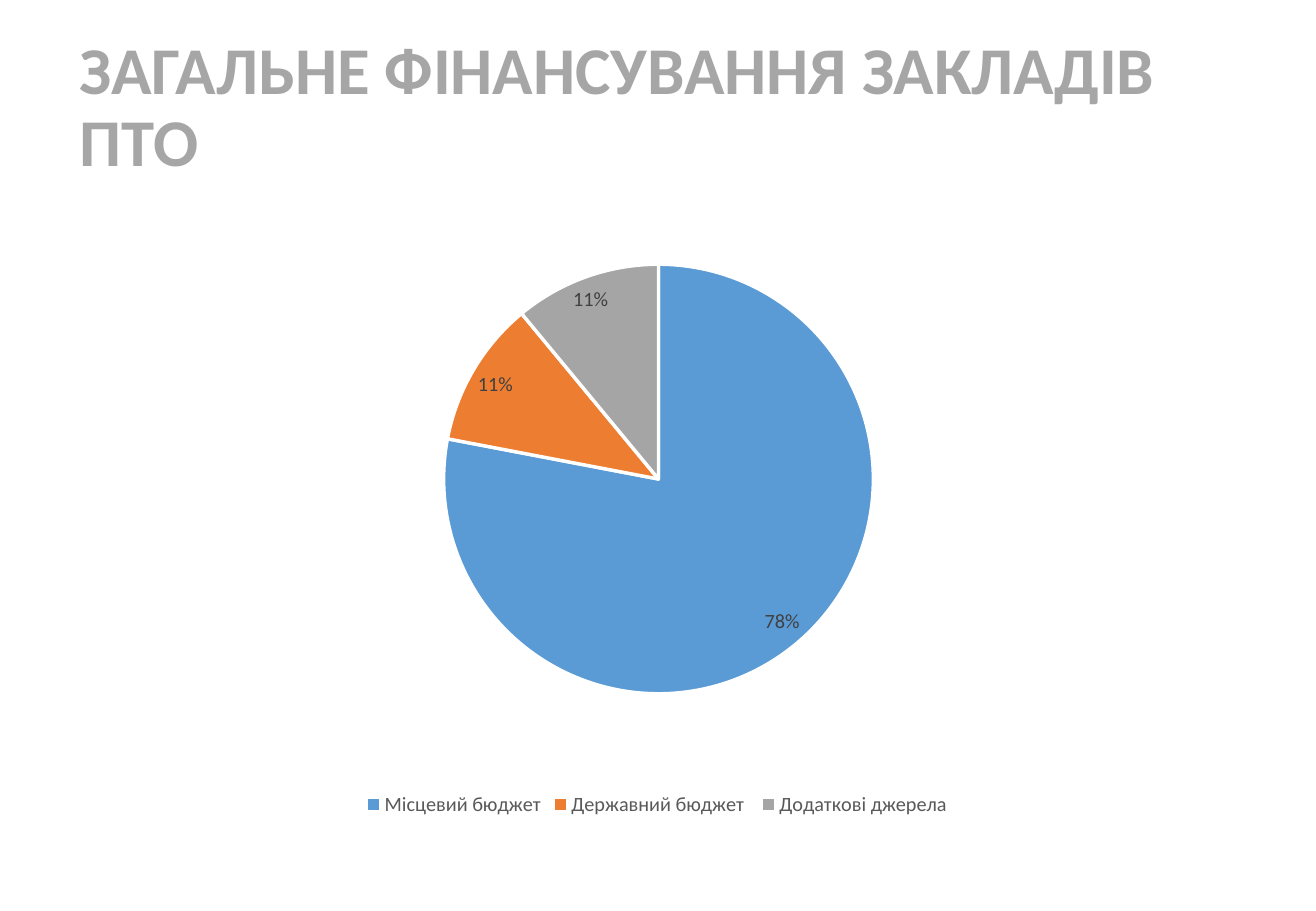
from lxml import etree
from pptx import Presentation
from pptx.chart.data import CategoryChartData
from pptx.dml.color import RGBColor
from pptx.enum.chart import XL_CHART_TYPE as ChartType
from pptx.enum.chart import XL_LABEL_POSITION as LabelPosition
from pptx.enum.chart import XL_LEGEND_POSITION as LegendPosition
from pptx.enum.text import MSO_ANCHOR as Anchor
from pptx.oxml import parse_xml
from pptx.oxml.ns import nsdecls, qn
from pptx.util import Inches, Pt

FONT = "Calibri"
FUNDING = [
    ("Місцевий бюджет", 78, "5B9BD5"),
    ("Державний бюджет ", 11, "ED7D31"),
    ("Додаткові джерела", 11, "A5A5A5"),
]
PIE_AREA = {"x": 0.08, "y": 0.037, "w": 0.842, "h": 0.743}


def color(hex_value):
    """Return the colour for a hex string."""
    return RGBColor.from_string(hex_value)


def style_font(font, size, hex_value, bold=False):
    """Set typeface, size, colour and weight."""
    font.name = FONT
    font.size = Pt(size)
    font.color.rgb = color(hex_value)
    font.bold = bold


def add_heading(slide, text, left, top, width, height):
    """Add the slide heading."""
    heading = slide.shapes.add_textbox(
        Inches(left), Inches(top), Inches(width), Inches(height))
    frame = heading.text_frame
    frame.word_wrap = True
    frame.vertical_anchor = Anchor.TOP
    frame.text = text
    line = frame.paragraphs[0]
    line.line_spacing = 0.9
    style_font(line.runs[0].font, 39.6, "A6A6A6", bold=True)


def set_pie_area(chart, area):
    """Fix the inner plot area as fractions of the chart."""
    plot_area = chart.plots[0]._element.getparent()
    for old_layout in plot_area.findall(qn("c:layout")):
        plot_area.remove(old_layout)
    layout = parse_xml(f"<c:layout {nsdecls('c')}><c:manualLayout/></c:layout>")
    settings = {"layoutTarget": "inner", "xMode": "edge", "yMode": "edge", **area}
    for tag, value in settings.items():
        etree.SubElement(layout[0], qn(f"c:{tag}")).set("val", str(value))
    plot_area.insert(0, layout)


def add_funding_pie(slide, left, top, width, height):
    """Add the pie of funding shares with its legend."""
    shares = CategoryChartData()
    shares.categories = [source for source, _, _ in FUNDING]
    shares.add_series("Series 1", [share for _, share, _ in FUNDING])
    chart = slide.shapes.add_chart(
        ChartType.PIE, Inches(left), Inches(top), Inches(width), Inches(height),
        shares).chart
    style_font(chart.font, 10, "000000")
    chart.has_title = False
    chart.has_legend = True
    chart.legend.position = LegendPosition.BOTTOM
    chart.legend.include_in_layout = False
    style_font(chart.legend.font, 12, "595959")
    set_pie_area(chart, PIE_AREA)

    pie = chart.plots[0]
    pie.vary_by_categories = True
    for index, (_, _, hex_value) in enumerate(FUNDING):
        piece = pie.series[0].points[index].format
        piece.fill.solid()
        piece.fill.fore_color.rgb = color(hex_value)
        piece.line.color.rgb = color("FFFFFF")
        piece.line.width = Pt(2)

    labels = pie.series[0].data_labels
    labels.show_value = False
    labels.show_percentage = True
    labels.number_format = "0%"
    labels.number_format_is_linked = False
    labels.position = LabelPosition.BEST_FIT
    style_font(labels.font, 12, "404040")


def main():
    """Build and save the slide."""
    deck = Presentation()
    deck.slide_width, deck.slide_height = Inches(10.83), Inches(7.5)
    slide = deck.slides.add_slide(deck.slide_layouts[6])
    add_heading(slide, "ЗАГАЛЬНЕ ФІНАНСУВАННЯ ЗАКЛАДІВ ПТО", 0.56, 0.25, 9.34, 1.58)
    add_funding_pie(slide, 0.74, 2, 9.34, 4.76)
    deck.save("out.pptx")


if __name__ == "__main__":
    main()
